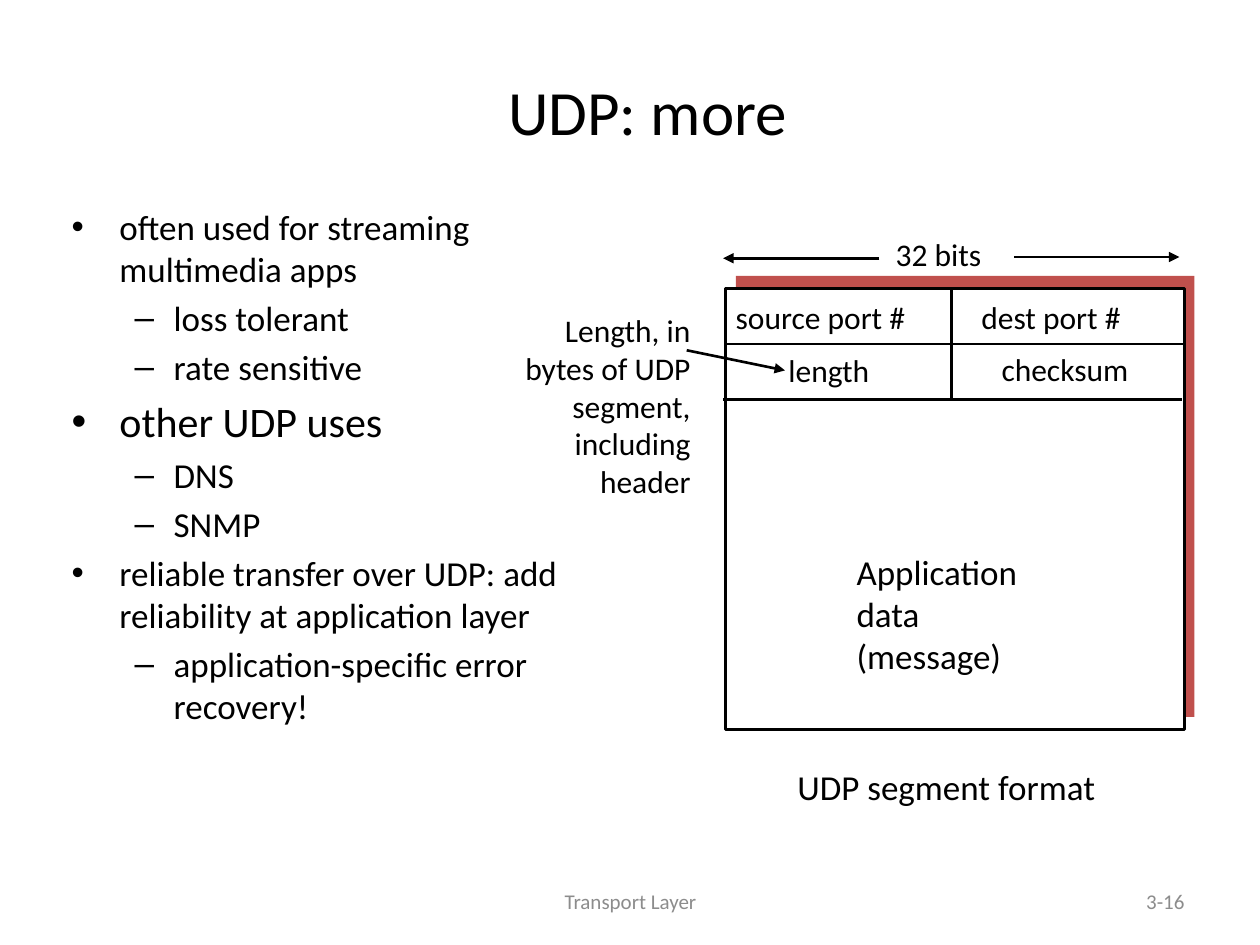
from lxml.etree import SubElement
from pptx import Presentation
from pptx.dml.color import RGBColor
from pptx.enum.shapes import MSO_CONNECTOR, MSO_SHAPE
from pptx.enum.text import MSO_ANCHOR, MSO_AUTO_SIZE, PP_ALIGN
from pptx.oxml.ns import qn
from pptx.util import Inches, Pt

BLACK = "000000"
GRAY = "8C8C8C"
RED = "C0504D"
WHITE = "FFFFFF"


def color(value):
    return RGBColor.from_string(value)


def write(paragraph, text, size=18, fill=BLACK, align=PP_ALIGN.LEFT, font="Calibri"):
    paragraph.alignment = align
    run = paragraph.add_run()
    run.text = text
    run.font.name = font
    run.font.size = Pt(size)
    run.font.color.rgb = color(fill)


class SlideBuilder:
    line_color = BLACK
    line_width = Pt(1.5)

    def __init__(self, slide):
        self.slide = slide

    def text(self, left, top, width, height, lines, wrap=False,
             anchor=MSO_ANCHOR.TOP, **style):
        box = self.slide.shapes.add_textbox(
            Inches(left), Inches(top), Inches(width), Inches(height))
        frame = box.text_frame
        frame.word_wrap = wrap
        frame.auto_size = MSO_AUTO_SIZE.NONE if wrap else MSO_AUTO_SIZE.SHAPE_TO_FIT_TEXT
        frame.vertical_anchor = anchor
        for index, line in enumerate(lines):
            paragraph = frame.add_paragraph() if index else frame.paragraphs[0]
            write(paragraph, line, **style)

    def bullets(self, left, top, width, height, items):
        box = self.slide.shapes.add_textbox(
            Inches(left), Inches(top), Inches(width), Inches(height))
        frame = box.text_frame
        frame.word_wrap = True
        for index, (level, size, line) in enumerate(items):
            paragraph = frame.add_paragraph() if index else frame.paragraphs[0]
            paragraph.level = level
            paragraph.space_before = Pt(size * 0.2)
            write(paragraph, line, size=size)
            margin, hanging, character = ((0.38, 0.38, "•"), (0.81, 0.31, "–"))[level]
            properties = paragraph._p.get_or_add_pPr()
            properties.set("marL", str(Inches(margin)))
            properties.set("indent", str(-Inches(hanging)))
            SubElement(properties, qn("a:buFont"), typeface="Arial")
            SubElement(properties, qn("a:buChar"), char=character)

    def rectangle(self, left, top, width, height, fill, outlined=False):
        shape = self.slide.shapes.add_shape(
            MSO_SHAPE.RECTANGLE, Inches(left), Inches(top), Inches(width), Inches(height))
        shape.shadow.inherit = False
        shape.fill.solid()
        shape.fill.fore_color.rgb = color(fill)
        if outlined:
            shape.line.color.rgb = color(self.line_color)
            shape.line.width = self.line_width
        else:
            shape.line.fill.background()

    def line(self, start_x, start_y, end_x, end_y, arrow=False):
        connector = self.slide.shapes.add_connector(
            MSO_CONNECTOR.STRAIGHT, Inches(start_x), Inches(start_y),
            Inches(end_x), Inches(end_y))
        connector.line.color.rgb = color(self.line_color)
        connector.line.width = self.line_width
        if arrow:
            SubElement(connector.line._get_or_add_ln(), qn("a:tailEnd"), type="triangle")
        SubElement(connector._element.spPr, qn("a:effectLst"))


def main():
    presentation = Presentation()
    presentation.slide_width = Inches(10)
    presentation.slide_height = Inches(7.5)
    builder = SlideBuilder(presentation.slides.add_slide(presentation.slide_layouts[6]))

    footer = dict(wrap=True, anchor=MSO_ANCHOR.MIDDLE, size=12, fill=GRAY)
    builder.text(3.42, 6.95, 3.17, 0.4, ["Transport Layer"], align=PP_ALIGN.CENTER, **footer)
    builder.text(7.17, 6.95, 2.33, 0.4, ["3-16"], align=PP_ALIGN.RIGHT, **footer)
    builder.text(0.58, 0.25, 9.12, 1.25, ["UDP: more"], wrap=True,
                 anchor=MSO_ANCHOR.MIDDLE, size=36, align=PP_ALIGN.CENTER)
    builder.bullets(0.47, 1.58, 4.17, 5.08, [
        (0, 20, "often used for streaming multimedia apps"),
        (1, 20, "loss tolerant"),
        (1, 20, "rate sensitive"),
        (0, 24, "other UDP uses"),
        (1, 20, "DNS"),
        (1, 20, "SNMP"),
        (0, 20, "reliable transfer over UDP: add reliability at application layer"),
        (1, 20, "application-specific error recovery!"),
    ])

    builder.rectangle(5.84, 2.19, 3.64, 3.5, RED)
    builder.rectangle(5.76, 2.29, 3.64, 3.5, WHITE, outlined=True)
    builder.line(5.75, 2.73, 9.39, 2.73)
    builder.line(5.74, 3.17, 9.38, 3.17)
    for bottom, top in ((2.72, 2.29), (3.17, 2.74)):
        builder.line(7.55, bottom, 7.55, top)

    for left, top, width, label in (
        (5.74, 2.32, 1.83, "source port #"),
        (7.69, 2.32, 1.59, "dest port #"),
        (6.16, 2.74, 0.93, "length"),
        (7.85, 2.73, 1.32, "checksum"),
        (7.01, 1.82, 1.04, "32 bits"),
    ):
        builder.text(left, top, width, 0.4, [label])

    builder.line(8.05, 2.04, 9.36, 2.04, arrow=True)
    builder.line(6.98, 2.05, 5.74, 2.05, arrow=True)
    builder.text(6.7, 4.32, 1.64, 1.1, ["Application", "data", "(message)"], size=20)
    builder.text(6.23, 6.03, 2.9, 0.43, ["UDP segment format"], size=20)
    builder.text(3.82, 2.42, 1.76, 1.6,
                 ["Length, in", "bytes of UDP", "segment,", "including", "header"],
                 align=PP_ALIGN.RIGHT)
    builder.line(5.45, 2.78, 6.23, 2.94, arrow=True)

    presentation.save("out.pptx")


if __name__ == "__main__":
    main()
